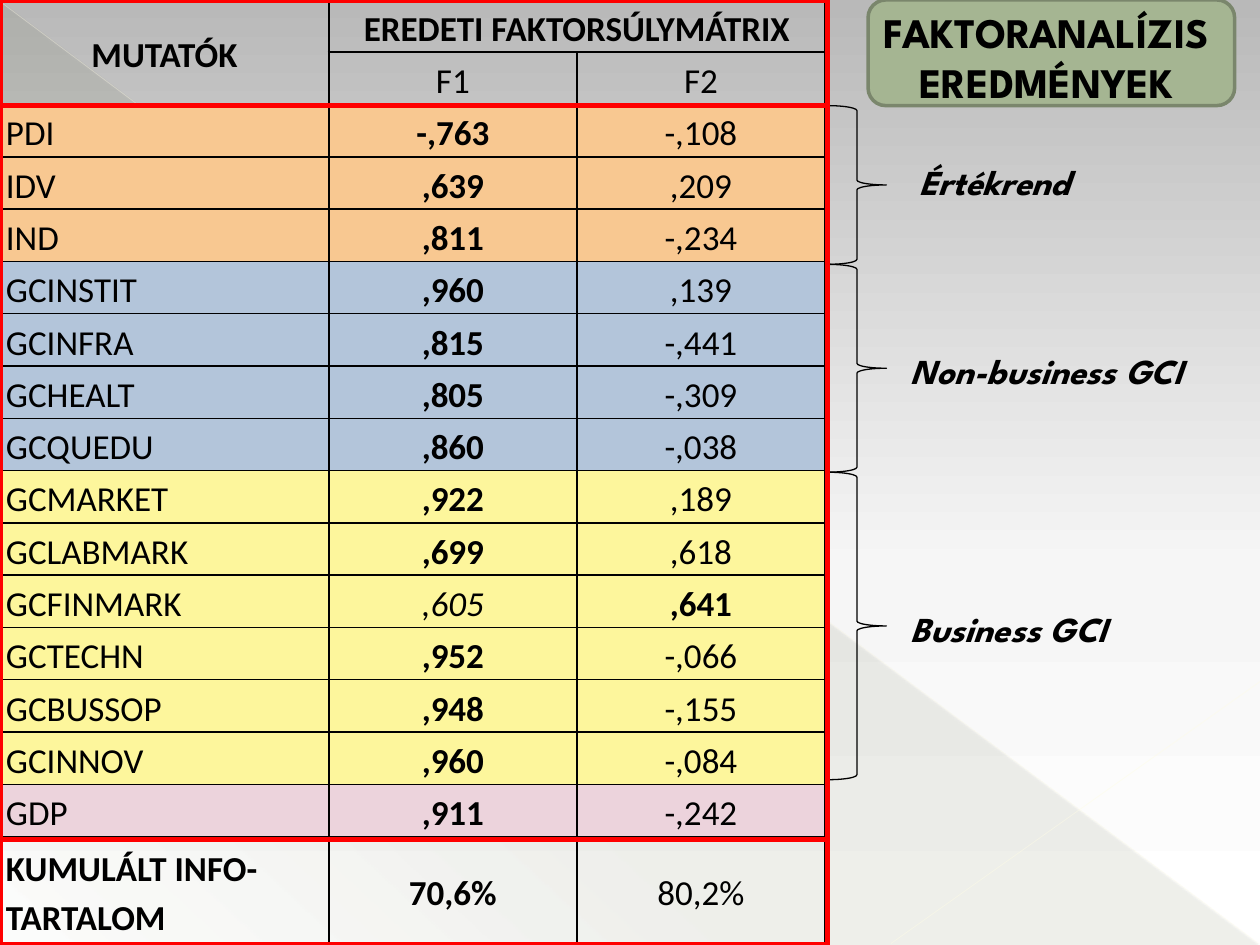
from lxml.etree import SubElement
from pptx import Presentation
from pptx.dml.color import RGBColor
from pptx.enum.shapes import MSO_CONNECTOR, MSO_SHAPE
from pptx.enum.text import MSO_ANCHOR, MSO_AUTO_SIZE, PP_ALIGN
from pptx.oxml.ns import qn
from pptx.util import Cm, Pt

WIDTH, HEIGHT = 25.4, 19.05
HEADER_HEIGHT = 2.13
FRAME_WIDTH = 16.68
TOTAL_HEIGHT = 2.18
COLUMNS = [6.63, 5, 5]
COLUMN_LINES = [1.5, 1.5, 1, 1]
HEADING_FONT = "League Spartan"

# Indicator bands: fill and rows of name, F1, F2
BANDS = [
    ("F8C891", [("PDI", "-,763", "-,108"), ("IDV", ",639", ",209"),
                ("IND", ",811", "-,234")]),
    ("B3C5DA", [("GCINSTIT", ",960", ",139"), ("GCINFRA", ",815", "-,441"),
                ("GCHEALT", ",805", "-,309"), ("GCQUEDU", ",860", "-,038")]),
    ("FDF69C", [("GCMARKET", ",922", ",189"), ("GCLABMARK", ",699", ",618"),
                ("GCFINMARK", ",605", ",641"), ("GCTECHN", ",952", "-,066"),
                ("GCBUSSOP", ",948", "-,155"), ("GCINNOV", ",960", "-,084")]),
    ("ECD3DC", [("GDP", ",911", "-,242")]),
]

# Brace height, then label text, left, top and width
GROUPS = [
    (3.2, "Értékrend", 18.29, 3.12, 5.99),
    (4.19, "Non-business GCI", 18.11, 6.93, 6.71),
    (6.2, "Business GCI", 18.11, 12.12, 6.71),
]


def color(value):
    return RGBColor.from_string(value)


def add_alpha(parent, percent):
    SubElement(parent, qn("a:alpha")).set("val", str(percent * 1000))


def paint_gradient(owner, stops, angle):
    """Replace the solid fill of an XML owner with a linear gradient."""
    solid = owner.find(qn("a:solidFill"))
    gradient = SubElement(owner, qn("a:gradFill"))
    stop_list = SubElement(gradient, qn("a:gsLst"))
    for position, value, opacity in stops:
        stop = SubElement(stop_list, qn("a:gs"))
        stop.set("pos", str(position * 1000))
        tone = SubElement(stop, qn("a:srgbClr"))
        tone.set("val", value)
        if opacity < 100:
            add_alpha(tone, opacity)
    SubElement(gradient, qn("a:lin")).set("ang", str(angle * 60000))
    owner.replace(solid, gradient)


def write(para, text, font, size, bold=False, italic=False):
    span = para.add_run()
    span.text = text
    span.font.name = font
    span.font.size = Pt(size)
    span.font.bold = bold
    span.font.italic = italic
    span.font.color.rgb = color("000000")


def add_outline(page, kind, box, line, width, fill=None):
    shape = page.shapes.add_shape(kind, *map(Cm, box))
    shape.shadow.inherit = False
    if fill:
        shape.fill.solid()
        shape.fill.fore_color.rgb = color(fill)
    else:
        shape.fill.background()
    if line:
        shape.line.color.rgb = color(line)
        shape.line.width = Pt(width)
    else:
        shape.line.fill.background()
    return shape


def add_background(page):
    page.background.fill.solid()
    paint_gradient(page.element.find(".//" + qn("p:bgPr")),
                   [(0, "B9B9B9", 100), (60, "F6F6F6", 100), (100, "FFFFFF", 100)], 90)
    triangle = add_outline(page, MSO_SHAPE.RIGHT_TRIANGLE,
                           (0.03, 0.05, 25.35, 19), None, 0, "444D26")
    paint_gradient(triangle.element.spPr,
                   [(0, "444D26", 10), (70, "444D26", 8), (100, "444D26", 1)], 133)
    # Pale diagonals
    for ends, value, width, opacity in [
            ((0, 0.03, 25.37, 19.02), "FFFDE3", 0.39, 35),
            ((25.4, 13.74, 17.96, 19.02), "FFFDE6", 0.47, 45)]:
        diagonal = page.shapes.add_connector(MSO_CONNECTOR.STRAIGHT, *map(Cm, ends))
        diagonal.line.color.rgb = color(value)
        diagonal.line.width = Pt(width)
        properties = diagonal.element.spPr
        add_alpha(properties.find(".//" + qn("a:srgbClr")), opacity)
        SubElement(properties, qn("a:effectLst"))


def set_borders(cell, widths):
    properties = cell.fill and cell._tc.get_or_add_tcPr()
    for index, (side, width) in enumerate(zip(("lnL", "lnR", "lnT", "lnB"), widths)):
        border = SubElement(properties, qn("a:" + side))
        border.set("w", str(Pt(width)))
        solid = SubElement(border, qn("a:solidFill"))
        SubElement(solid, qn("a:srgbClr")).set("val", "000000")
        properties.insert(index, border)


def is_bold(name, row, column):
    if column == 0:
        return row in (0, 16)
    if name == "GCFINMARK":
        return column == 2
    return row == 0 or (row > 1 and column == 1)


def add_factor_table(page, left, top, height):
    rows = [("MUTATÓK", "EREDETI FAKTORSÚLYMÁTRIX", ""), ("", "F1", "F2")]
    fills = [None, None]
    for fill, records in BANDS:
        rows += records
        fills += [fill] * len(records)
    rows.append(("KUMULÁLT INFO-TARTALOM", "70,6%", "80,2%"))
    fills.append(None)

    table = page.shapes.add_table(len(rows), len(COLUMNS), Cm(left), Cm(top),
                                  Cm(sum(COLUMNS)), Cm(height)).table
    table.first_row = table.horz_banding = False
    for column, width in zip(table.columns, COLUMNS):
        column.width = Cm(width)
    for row in table.rows:
        row.height = Cm((height - TOTAL_HEIGHT) / (len(rows) - 1))
    table.rows[len(rows) - 1].height = Cm(TOTAL_HEIGHT)
    table.cell(0, 0).merge(table.cell(1, 0))
    table.cell(0, 1).merge(table.cell(0, 2))

    row_lines = [1.5, 1.5, 1.5] + [1] * (len(rows) - 3) + [1.5]
    for i, (record, fill) in enumerate(zip(rows, fills)):
        for j, text in enumerate(record):
            cell = table.cell(i, j)
            cell.margin_left = cell.margin_right = Cm(0.12)
            cell.margin_top = cell.margin_bottom = 0
            cell.vertical_anchor = MSO_ANCHOR.MIDDLE
            if fill:
                cell.fill.solid()
                cell.fill.fore_color.rgb = color(fill)
            else:
                cell.fill.background()
            set_borders(cell, COLUMN_LINES[j:j + 2] + row_lines[i:i + 2])
            if text:
                para = cell.text_frame.paragraphs[0]
                para.line_spacing = 1.15
                para.alignment = PP_ALIGN.CENTER if j or i == 0 else PP_ALIGN.LEFT
                if i == j == 0:
                    para.space_after = Pt(10)
                write(para, text, "Calibri", 20, is_bold(record[0], i, j),
                      record[0] == "GCFINMARK" and j == 1)


def add_heading(page, left, top, width):
    add_outline(page, MSO_SHAPE.ROUNDED_RECTANGLE,
                (left + 0.2, top, width - 0.2, HEADER_HEIGHT), "7A866C", 2, "A5B592")
    title = page.shapes.title
    title.left, title.top, title.width, title.height = map(Cm, (left, top, width, 2.31))
    page.shapes.element.append(title.element)  # in front of its panel
    frame = title.text_frame
    frame.word_wrap = True
    frame.auto_size = MSO_AUTO_SIZE.SHAPE_TO_FIT_TEXT
    frame.vertical_anchor = MSO_ANCHOR.TOP
    frame.paragraphs[0].alignment = PP_ALIGN.CENTER
    write(frame.paragraphs[0], "FAKTORANALÍZIS EREDMÉNYEK", HEADING_FONT, 24, True)


def add_groups(page, left, top):
    for height, text, *place in GROUPS:
        add_outline(page, MSO_SHAPE.RIGHT_BRACE, (left, top, 1.19, height), "000000", 0.75)
        top += height
        label = page.shapes.add_textbox(*map(Cm, (*place, 1.12)))
        label.text_frame.word_wrap = True
        label.text_frame.auto_size = MSO_AUTO_SIZE.SHAPE_TO_FIT_TEXT
        write(label.text_frame.paragraphs[0], text, HEADING_FONT, 20, True, True)


def main():
    deck = Presentation()
    deck.slide_width, deck.slide_height = Cm(WIDTH), Cm(HEIGHT)
    page = deck.slides.add_slide(deck.slide_layouts[5])
    add_background(page)
    add_factor_table(page, 0, 0, HEIGHT)
    add_heading(page, 17.3, 0, 7.59)
    add_groups(page, FRAME_WIDTH, HEADER_HEIGHT)
    # Red frames: whole table, totals, header
    for top, height in [(0, HEIGHT), (HEIGHT - HEADER_HEIGHT, HEADER_HEIGHT),
                        (0, HEADER_HEIGHT)]:
        add_outline(page, MSO_SHAPE.RECTANGLE, (0, top, FRAME_WIDTH, height), "FF0000", 3)
    deck.save("out.pptx")


if __name__ == "__main__":
    main()
